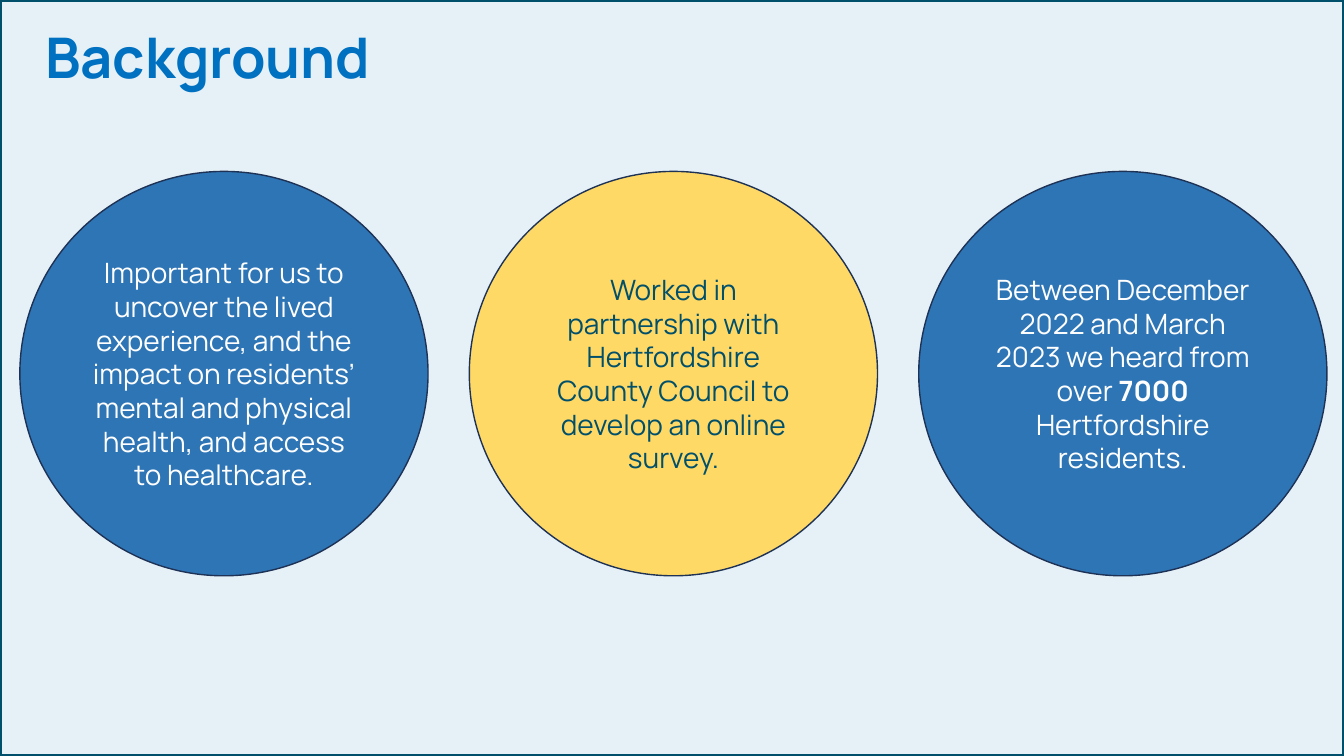
from pptx import Presentation
from pptx.dml.color import RGBColor
from pptx.enum.shapes import MSO_SHAPE as Kind
from pptx.enum.text import MSO_ANCHOR as Anchor, MSO_AUTO_SIZE as Fit, PP_ALIGN as Align
from pptx.util import Cm, Pt

WIDE, HIGH = 33.87, 19.05
BLUE, GOLD, TEAL, NAVY, WHITE = "2E75B6", "FFD966", "004F6B", "1E3256", "FFFFFF"
FACTS = [
    (BLUE, WHITE, ["Important for us to uncover the lived experience, and the impact on "
                   "residents’ mental and physical health, and access to healthcare."]),
    (GOLD, TEAL, ["Worked in partnership with Hertfordshire County Council to develop "
                  "an online survey."]),
    (BLUE, WHITE, ["Between December 2022 and March 2023 we heard from over ", "7000",
                   " Hertfordshire residents."]),
]


def tint(code):
    """Turn a hex string into a colour."""
    return RGBColor.from_string(code)


def write(frame, parts, size=20, color=WHITE, bold=False, anchor=Anchor.MIDDLE):
    """Write centred text, with every second part in bold."""
    frame.word_wrap = True
    frame.vertical_anchor = anchor
    para = frame.paragraphs[0]
    para.alignment = Align.CENTER
    for i, part in enumerate(parts):
        run = para.add_run()
        run.text = part
        font = run.font
        font.name, font.size = "Manrope", Pt(size)
        font.bold = bold or i % 2 == 1
        font.color.rgb = tint(color)


def draw(slide, kind, box, line, width, fill=None):
    """Draw an outlined shape, filled if a colour is given."""
    shape = slide.shapes.add_shape(kind, *map(Cm, box))
    shape.shadow.inherit = False
    shape.line.color.rgb = tint(line)
    shape.line.width = Pt(width)
    if fill:
        shape.fill.solid()
        shape.fill.fore_color.rgb = tint(fill)
    else:
        shape.fill.background()
    return shape


def head(slide, box, text):
    """Place the slide title in its box."""
    frame = slide.shapes.add_textbox(*map(Cm, box)).text_frame
    frame.margin_left = frame.margin_right = Cm(0.41)
    frame.margin_top = frame.margin_bottom = Cm(0.3)
    write(frame, [text], size=40, color="0070C0", bold=True, anchor=Anchor.TOP)
    frame.auto_size = Fit.SHAPE_TO_FIT_TEXT


def circles(slide, box, facts, gap=1.04):
    """Spread one circle per fact evenly across the box."""
    left, top, width, height = box
    wide = (width - gap * (len(facts) - 1)) / len(facts)
    for i, (fill, ink, parts) in enumerate(facts):
        spot = (left + i * (wide + gap), top, wide, height)
        disc = draw(slide, Kind.OVAL, spot, NAVY, 1, fill)
        write(disc.text_frame, parts, color=ink)


def main():
    """Build the slide and save it."""
    deck = Presentation()
    deck.slide_width, deck.slide_height = Cm(WIDE), Cm(HIGH)
    slide = deck.slides.add_slide(deck.slide_layouts[6])
    back = slide.background.fill
    back.solid()
    back.fore_color.rgb = tint("E6F1F7")
    draw(slide, Kind.RECTANGLE, (0, 0, WIDE, HIGH), TEAL, 3)
    head(slide, (-0.3, 0.28, 11.07, 2.31), "Background")
    circles(slide, (0.5, 4.32, 32.94, 10.19), FACTS)
    deck.save("out.pptx")


if __name__ == "__main__":
    main()
